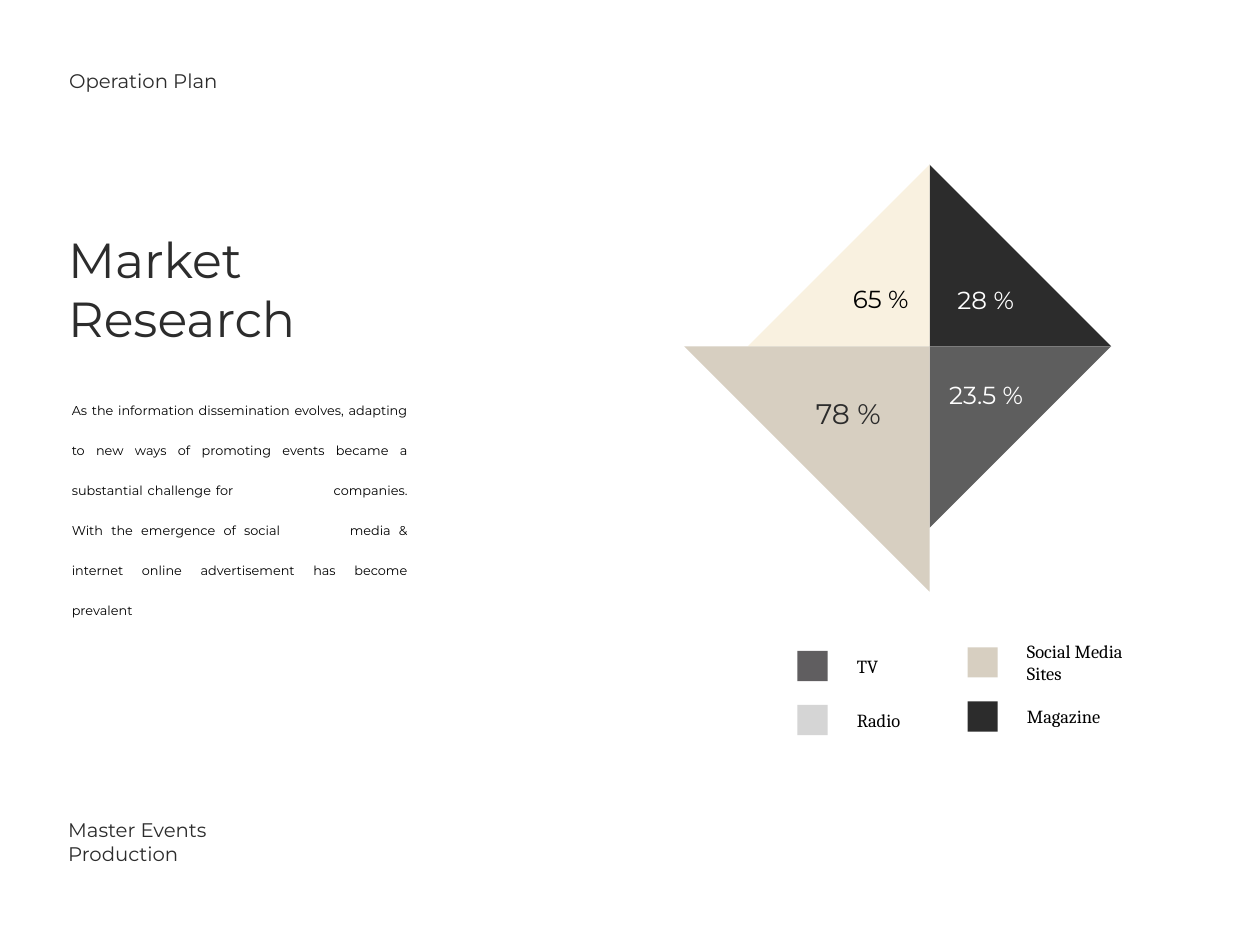
from lxml import etree
from pptx import Presentation
from pptx.dml.color import RGBColor
from pptx.enum.shapes import MSO_SHAPE
from pptx.enum.text import MSO_ANCHOR, MSO_AUTO_SIZE, PP_ALIGN
from pptx.oxml.ns import qn
from pptx.util import Inches, Pt

RECT, WEDGE = MSO_SHAPE.RECTANGLE, MSO_SHAPE.RIGHT_TRIANGLE
TOP, MID = MSO_ANCHOR.TOP, MSO_ANCHOR.MIDDLE
LEFT, CENTER, FULL = PP_ALIGN.LEFT, PP_ALIGN.CENTER, PP_ALIGN.JUSTIFY
FIXED = MSO_AUTO_SIZE.NONE
HUES = {
    "black": "000000", "white": "FFFFFF", "ink": "2C2C2C", "gray": "5E5E5E",
    "slate": "605E60", "silver": "D5D5D5", "sand": "D7CFC1", "cream": "F9F1E0",
}

deck = Presentation()
deck.slide_width, deck.slide_height = Inches(14.22), Inches(10.67)
slide = deck.slides.add_slide(deck.slide_layouts[5])


def write(text, x, y, w, h, size=16, font="Montserrat", hue="ink",
          align=LEFT, anchor=MID, box=None):
    area = [Inches(v) for v in (x, y, w, h)]
    if box is None:
        box = slide.shapes.add_textbox(*area)
    box.left, box.top, box.width, box.height = area
    frame = box.text_frame
    frame.word_wrap, frame.auto_size = True, FIXED
    frame.vertical_anchor = anchor
    frame.margin_left = frame.margin_right = Inches(0.03)
    frame.margin_top = frame.margin_bottom = Inches(0.03)
    para = frame.paragraphs[0]
    para.alignment = align
    run = para.add_run()
    run.text = text
    run.font.size, run.font.name = Pt(size), font
    run.font.color.rgb = RGBColor.from_string(HUES[hue])
    return para


def draw(kind, x, y, side, hue, turn=0):
    shape = slide.shapes.add_shape(
        kind, Inches(x), Inches(y), Inches(side), Inches(side))
    shape.shadow.inherit = False
    shape.fill.solid()
    shape.fill.fore_color.rgb = RGBColor.from_string(HUES[hue])
    shape.line.fill.background()
    shape.rotation = turn


write("Operation Plan", 0.75, 0.74, 3.27, 0.33)
write("Market Research", 0.74, 2.54, 2.77, 1.42, size=40, box=slide.shapes.title)
write("Master Events Production", 0.74, 9.08, 2.22, 0.85)

body = write(
    "As the information dissemination evolves, adapting to new ways of "
    "promoting events became a substantial challenge for\tcompanies. "
    "With the emergence of social\tmedia & internet online advertisement "
    "has become prevalent",
    0.78, 4.34, 3.85, 2.89, size=18, hue="black", align=FULL, anchor=TOP)
body.line_spacing = 1.5
body.runs[0].font._element.set("baseline", "30000")
stops = etree.SubElement(body._p.get_or_add_pPr(), qn("a:tabLst"))
etree.SubElement(stops, qn("a:tab"), pos=str(Inches(2.92)), algn="l")

mid_x, mid_y, arm, long = 10.49, 3.91, 2.05, 2.77
draw(WEDGE, mid_x, mid_y - arm, arm, "ink")
draw(WEDGE, mid_x, mid_y, arm, "gray", turn=90)
draw(WEDGE, mid_x - arm, mid_y - arm, arm, "cream", turn=270)
draw(WEDGE, mid_x - long, mid_y, long, "sand", turn=180)

for text, x, y, w, h, size, hue in [
    ("78 %", 9.15, 4.44, 0.85, 0.45, 23, "ink"),
    ("28 %", 10.75, 3.19, 0.75, 0.39, 20, "white"),
    ("65 %", 9.56, 3.18, 0.76, 0.39, 20, "black"),
    ("23.5 %", 10.64, 4.26, 0.98, 0.39, 20, "white"),
]:
    write(text, x, y, w, h, size=size, hue=hue, align=CENTER)

side, step, gap = 0.34, 0.61, 0.64
for x, top, items in [
    (9, 7.35, [("TV", "slate", 0.75, 0.32), ("Radio", "silver", 0.98, 0.32)]),
    (10.92, 7.31, [("Social Media Sites", "sand", 1.31, 0.59),
                   ("Magazine", "ink", 1.14, 0.32)]),
]:
    for row, (name, hue, w, h) in enumerate(items):
        y = top + row * step
        draw(RECT, x, y, side, hue)
        write(name, x + gap, y + (side - h) / 2, w, h,
              size=15, font="Cambria", hue="black")

deck.save("out.pptx")
